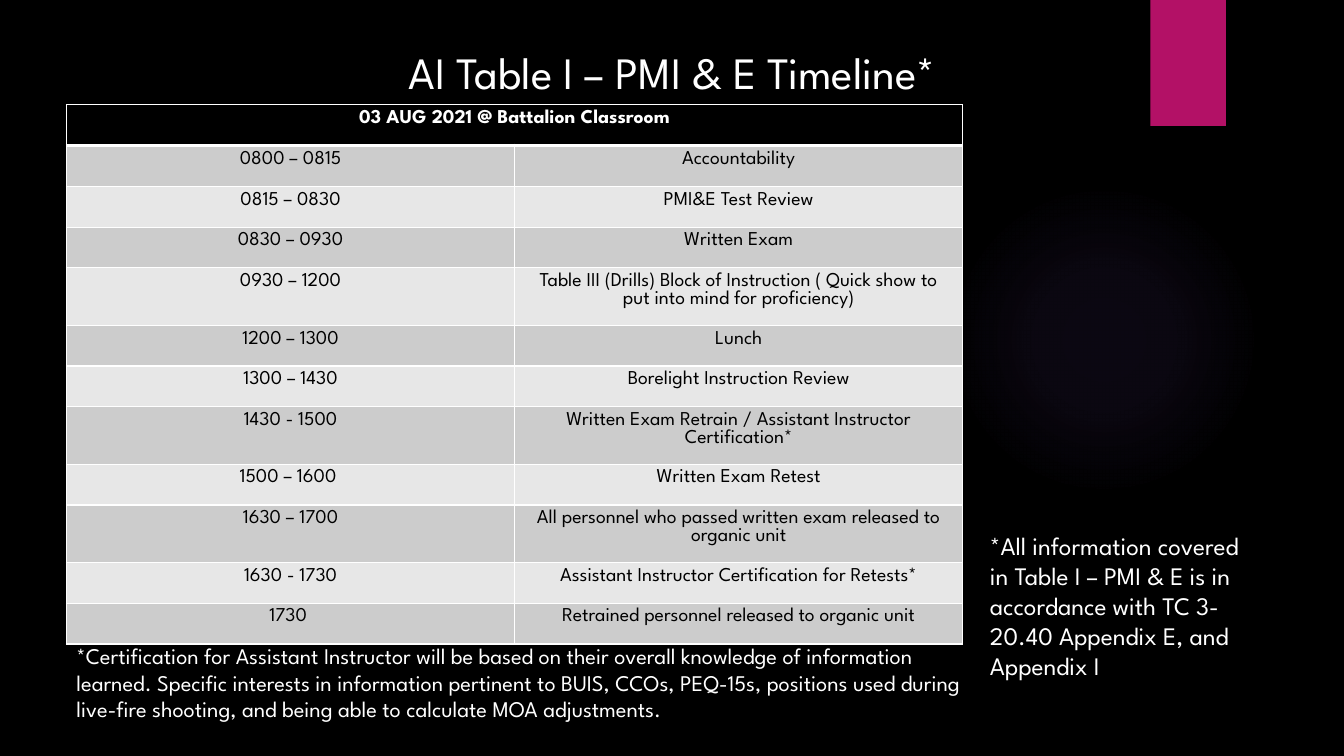
from lxml import etree
from pptx import Presentation
from pptx.dml.color import RGBColor
from pptx.enum.shapes import MSO_SHAPE
from pptx.enum.text import MSO_AUTO_SIZE, PP_ALIGN
from pptx.oxml import parse_xml
from pptx.oxml.ns import nsdecls, qn
from pptx.util import Inches, Pt

BLACK = RGBColor(0x00, 0x00, 0x00)
WHITE = RGBColor(0xFF, 0xFF, 0xFF)
MAGENTA = RGBColor(0xB3, 0x11, 0x66)
DARK_BAND = RGBColor(0xCC, 0xCC, 0xCC)
LIGHT_BAND = RGBColor(0xE7, 0xE7, 0xE7)
GLOW = "9B6BF2"
FONT = "League Spartan"

TITLE = "AI Table I – PMI & E Timeline*"
HEADER = "03 AUG 2021 @ Battalion Classroom"
SCHEDULE = [
    ("0800 – 0815", "Accountability"),
    ("0815 – 0830", "PMI&E Test Review"),
    ("0830 – 0930", "Written Exam"),
    ("0930 – 1200", "Table III (Drills) Block of Instruction ( Quick show to put into mind for proficiency)"),
    ("1200 – 1300", "Lunch"),
    ("1300 – 1430", "Borelight Instruction Review"),
    ("1430 - 1500", "Written Exam Retrain / Assistant Instructor Certification*"),
    ("1500 – 1600 ", "Written Exam Retest"),
    ("1630 – 1700", "All personnel who passed written exam released to organic unit"),
    ("1630 - 1730", "Assistant Instructor Certification for Retests*"),
    ("1730 ", "Retrained personnel released to organic unit"),
]
CERTIFICATION_NOTE = (
    "*Certification for Assistant Instructor will be based on their overall knowledge of "
    "information learned. Specific interests in information pertinent to BUIS, CCOs, PEQ-15s, "
    "positions used during live-fire shooting, and being able to calculate MOA adjustments."
)
REFERENCE_NOTE = (
    "*All information covered in Table I – PMI & E is in accordance with "
    "TC 3-20.40 Appendix E, and Appendix I"
)
TABLE_HEIGHT = 5.35
TALL_ROW = 0.57
WRAP_LENGTH = 50


def write(tf, text, size, pitch, color=WHITE, align=PP_ALIGN.LEFT, bold=False):
    tf.text = text
    p = tf.paragraphs[0]
    p.alignment = align
    p.line_spacing = Pt(pitch)
    font = p.runs[0].font
    font.name = FONT
    font.size = Pt(size)
    font.bold = bold
    font.color.rgb = color


def add_text(s, box, text, size, pitch, align=PP_ALIGN.LEFT, wrap=True):
    tf = s.shapes.add_textbox(*map(Inches, box)).text_frame
    tf.word_wrap = wrap
    tf.auto_size = MSO_AUTO_SIZE.SHAPE_TO_FIT_TEXT
    write(tf, text, size, pitch, align=align)


def add_block(s, kind, box, color):
    sp = s.shapes.add_shape(kind, *map(Inches, box))
    sp.shadow.inherit = False
    sp.fill.solid()
    sp.fill.fore_color.rgb = color
    sp.line.fill.background()
    return sp


def add_glow(s, box, stops):
    sp = add_block(s, MSO_SHAPE.OVAL, box, BLACK)
    marks = "".join(
        f'<a:gs pos="{pos * 1000}"><a:srgbClr val="{GLOW}">'
        f'<a:alpha val="{alpha * 1000}"/></a:srgbClr></a:gs>'
        for pos, alpha in stops
    )
    grad = parse_xml(
        f'<a:gradFill {nsdecls("a")}><a:gsLst>{marks}</a:gsLst><a:path path="circle">'
        '<a:fillToRect l="50000" t="50000" r="50000" b="50000"/></a:path></a:gradFill>'
    )
    props = sp.element.spPr
    props.replace(props.find(qn("a:solidFill")), grad)


def set_borders(cell, widths):
    props = cell._tc.get_or_add_tcPr()
    for i, (side, width) in enumerate(widths.items()):
        line = etree.Element(qn(f"a:ln{side}"), w=str(Pt(width)))
        fill = etree.SubElement(line, qn("a:solidFill"))
        etree.SubElement(fill, qn("a:srgbClr"), val=str(WHITE))
        props.insert(i, line)


def fill_cell(cell, text, fill, color=BLACK, bold=False, top=1, bottom=1):
    cell.fill.solid()
    cell.fill.fore_color.rgb = fill
    set_borders(cell, {"L": 1, "R": 1, "T": top, "B": bottom})
    if text:
        write(cell.text_frame, text, 14, 12.9, color, PP_ALIGN.CENTER, bold)


def add_schedule(s):
    frame = s.shapes.add_table(
        len(SCHEDULE) + 1, 2, Inches(0.66), Inches(1.04), Inches(8.89), Inches(TABLE_HEIGHT)
    )
    table = frame.table
    tall = [len(event) > WRAP_LENGTH for _, event in SCHEDULE]
    short_row = (TABLE_HEIGHT - sum(tall) * TALL_ROW) / (len(table.rows) - sum(tall))
    for row, is_tall in zip(table.rows, [False] + tall):
        row.height = Inches(TALL_ROW if is_tall else short_row)
    table.cell(0, 0).merge(table.cell(0, 1))
    for col, text in enumerate((HEADER, "")):
        fill_cell(table.cell(0, col), text, BLACK, WHITE, True, bottom=3)
    for i, entry in enumerate(SCHEDULE):
        band = LIGHT_BAND if i % 2 else DARK_BAND
        for col, text in enumerate(entry):
            fill_cell(table.cell(i + 1, col), text, band, top=1 if i else 3)


def main():
    prs = Presentation()
    prs.slide_width, prs.slide_height = Inches(13.33), Inches(7.5)
    s = prs.slides.add_slide(prs.slide_layouts[6])
    s.background.fill.solid()
    s.background.fill.fore_color.rgb = BLACK
    add_glow(s, (9.41, 1.83, 3.08, 3.08), [(0, 7), (36, 6), (69, 0)])
    add_block(s, MSO_SHAPE.RECTANGLE, (11.41, 0, 0.75, 1.25), MAGENTA)
    add_text(s, (3.85, 0.4, 5.64, 0.64), TITLE, 32, 38, PP_ALIGN.CENTER, wrap=False)
    add_schedule(s)
    add_text(s, (0.66, 6.33, 9.01, 0.91), CERTIFICATION_NOTE, 16, 18.9)
    add_text(s, (9.72, 5.21, 2.7, 1.92), REFERENCE_NOTE, 18, 21.5)
    prs.save("out.pptx")


if __name__ == "__main__":
    main()
